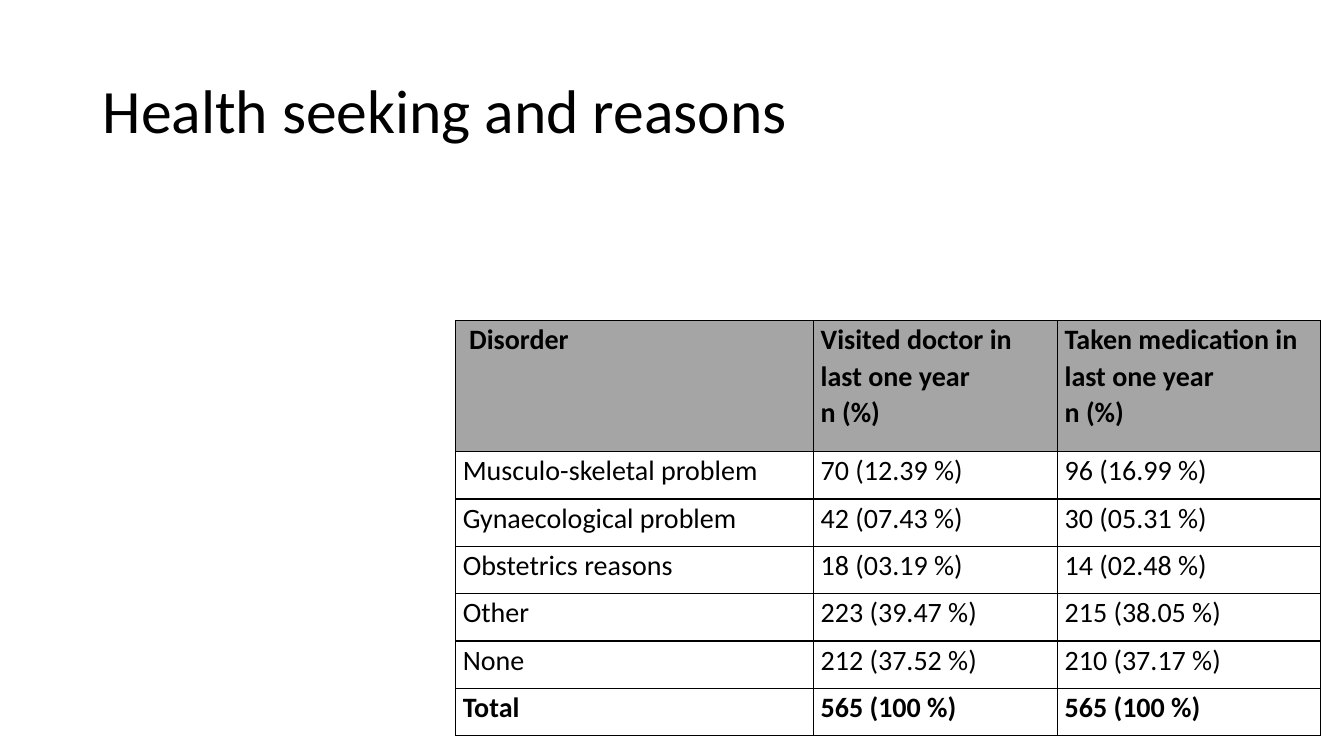
"""Build the slide on health seeking and its reasons."""
from dataclasses import dataclass

from lxml.etree import SubElement
from pptx import Presentation
from pptx.dml.color import RGBColor as Rgb
from pptx.enum.text import MSO_ANCHOR as Anchor
from pptx.oxml.ns import qn
from pptx.util import Emu, Pt

PX = 9144
FONT = "Calibri"
COLOURS = {"text": "000000", "border": "000000", "header": "A5A5A5", "page": "FFFFFF"}
COLUMN_WIDTHS = (355, 242, 261)
HEADER_HEIGHT = 130
ROW_HEIGHT = 47
CELL_INSET = 7


@dataclass(frozen=True)
class Row:
    cells: tuple[str, ...]
    bold: bool = False
    fill: str = "page"
    height: int = ROW_HEIGHT


ROWS = (
    Row(
        (
            " Disorder",
            "Visited doctor in last one year\nn (%)",
            "Taken medication in last one year\nn (%)",
        ),
        bold=True,
        fill="header",
        height=HEADER_HEIGHT,
    ),
    Row(("Musculo-skeletal problem", "70 (12.39 %)", "96 (16.99 %)")),
    Row(("Gynaecological problem", "42 (07.43 %)", "30 (05.31 %)")),
    Row(("Obstetrics reasons", "18 (03.19 %)", "14 (02.48 %)")),
    Row(("Other", "223 (39.47 %)", "215 (38.05 %)")),
    Row(("None", "212 (37.52 %)", "210 (37.17 %)")),
    Row(("Total", "565 (100 %)", "565 (100 %)"), bold=True),
)


def px(length: int) -> Emu:
    return Emu(length * PX)


def write(frame, text: str, size: int, spacing: float, bold: bool = False) -> None:
    for index, line in enumerate(text.split("\n")):
        para = frame.add_paragraph() if index else frame.paragraphs[0]
        para.line_spacing = spacing
        span = para.add_run()
        span.text = line
        span.font.name = FONT
        span.font.size = Pt(size)
        span.font.bold = bold
        span.font.color.rgb = Rgb.from_string(COLOURS["text"])


def add_borders(cell) -> None:
    properties = cell._tc.get_or_add_tcPr()
    for index, side in enumerate(("lnL", "lnR", "lnT", "lnB")):
        line = properties.makeelement(qn(f"a:{side}"), {"w": str(Pt(1))})
        fill = SubElement(line, qn("a:solidFill"))
        SubElement(fill, qn("a:srgbClr"), val=COLOURS["border"])
        properties.insert(index, line)


def add_title(page, text: str) -> None:
    box = page.shapes.add_textbox(px(92), px(40), px(1150), px(145))
    frame = box.text_frame
    frame.word_wrap = True
    frame.vertical_anchor = Anchor.MIDDLE
    write(frame, text, 44, 0.9)


def add_reasons_table(page, rows: tuple[Row, ...]) -> None:
    width = sum(COLUMN_WIDTHS)
    height = sum(row.height for row in rows)
    table = page.shapes.add_table(
        len(rows), len(COLUMN_WIDTHS), px(452), px(318), px(width), px(height)
    ).table
    table.first_row = False
    table.horz_banding = False
    for column, column_width in zip(table.columns, COLUMN_WIDTHS):
        column.width = px(column_width)
    for table_row, row in zip(table.rows, rows):
        table_row.height = px(row.height)
        for cell, text in zip(table_row.cells, row.cells):
            cell.margin_left = cell.margin_right = px(CELL_INSET)
            cell.margin_top = cell.margin_bottom = 0
            cell.fill.solid()
            cell.fill.fore_color.rgb = Rgb.from_string(COLOURS[row.fill])
            add_borders(cell)
            write(cell.text_frame, text, 20, 1.07, row.bold)


def main() -> None:
    deck = Presentation()
    deck.slide_width, deck.slide_height = px(1333), px(750)
    page = deck.slides.add_slide(deck.slide_layouts[6])
    add_title(page, "Health seeking and reasons")
    add_reasons_table(page, ROWS)
    deck.save("out.pptx")


if __name__ == "__main__":
    main()
